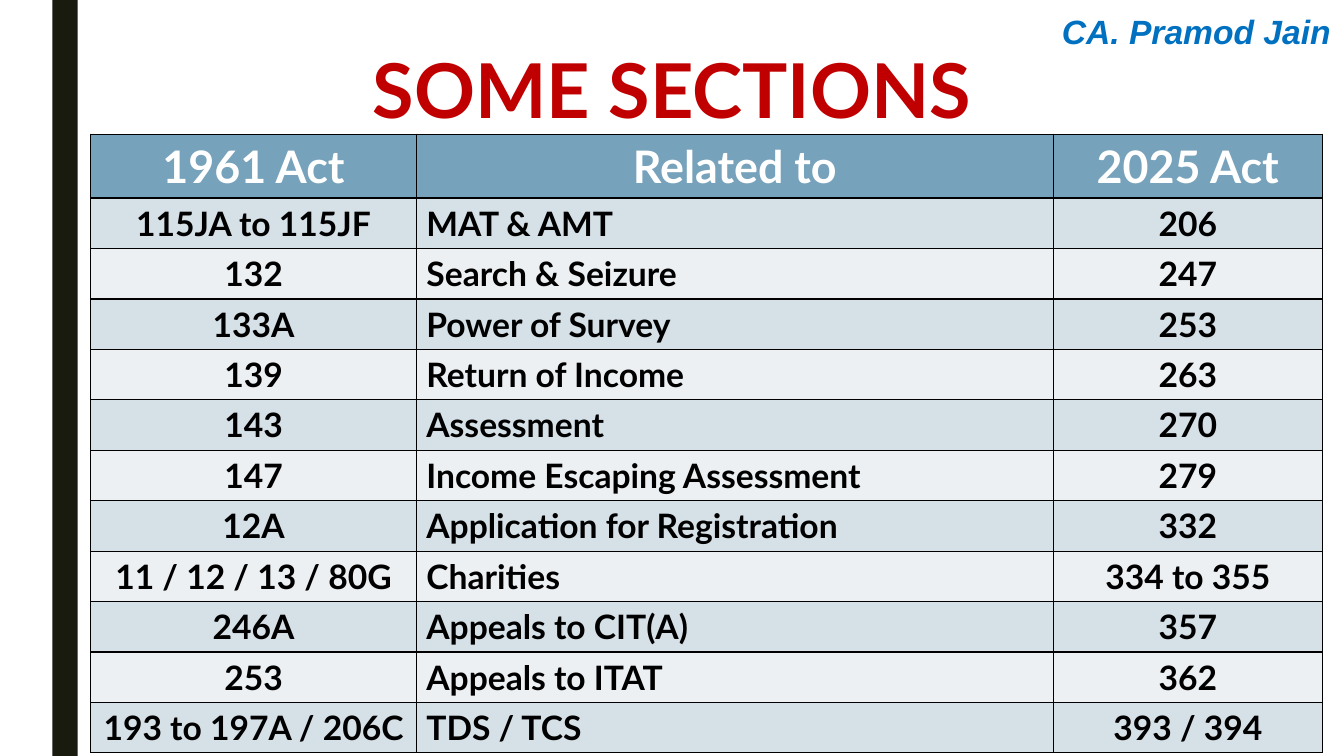
import lxml.etree
import pptx
import pptx.dml.color
import pptx.enum.shapes
import pptx.enum.text
import pptx.oxml.ns
import pptx.util

RGBColor = pptx.dml.color.RGBColor
Align = pptx.enum.text.PP_ALIGN
Anchor = pptx.enum.text.MSO_ANCHOR

BAR = RGBColor(0x19, 0x1B, 0x0E)
BLUE = RGBColor(0x00, 0x70, 0xC0)
RED = RGBColor(0xC0, 0x00, 0x00)
WHITE = RGBColor(0xFF, 0xFF, 0xFF)
BLACK = RGBColor(0x00, 0x00, 0x00)
HEADER = RGBColor(0x77, 0xA2, 0xBB)
BANDS = (RGBColor(0xD6, 0xE0, 0xE7), RGBColor(0xEC, 0xF0, 0xF3))

HEADINGS = ("1961 Act", "Related to", "2025 Act")
SECTIONS = (
    ("115JA to 115JF", "MAT & AMT", "206"),
    ("132", "Search & Seizure", "247"),
    ("133A", "Power of Survey", "253"),
    ("139", "Return of Income", "263"),
    ("143", "Assessment", "270"),
    ("147", "Income Escaping Assessment", "279"),
    ("12A", "Application for Registration", "332"),
    ("11 / 12 / 13 / 80G", "Charities", "334 to 355"),
    ("246A", "Appeals to CIT(A)", "357"),
    ("253", "Appeals to ITAT", "362"),
    ("193 to 197A / 206C", "TDS / TCS", "393 / 394"),
)


class SectionSlide:
    font = "Lato"

    def __init__(self, deck):
        self.deck = deck
        self.slide = deck.slides.add_slide(deck.slide_layouts[6])

    def across(self, percent):
        return round(self.deck.slide_width * percent / 100)

    def down(self, percent):
        return round(self.deck.slide_height * percent / 100)

    def area(self, left, top, width, height):
        return self.across(left), self.down(top), self.across(width), self.down(height)

    def set_words(self, frame, words, size, color, align, font=None, italic=False):
        frame.text = words
        paragraph = frame.paragraphs[0]
        paragraph.alignment = align
        style = paragraph.runs[0].font
        style.name = font or self.font
        style.size = pptx.util.Pt(size)
        style.bold = True
        style.italic = italic
        style.color.rgb = color

    def bar(self, area, color):
        bar = self.slide.shapes.add_shape(
            pptx.enum.shapes.MSO_SHAPE.RECTANGLE, *self.area(*area))
        bar.shadow.inherit = False
        bar.fill.solid()
        bar.fill.fore_color.rgb = color
        bar.line.fill.background()

    def text(self, area, words, size, color, align, anchor=Anchor.TOP, **style):
        frame = self.slide.shapes.add_textbox(*self.area(*area)).text_frame
        frame.word_wrap = True
        frame.vertical_anchor = anchor
        self.set_words(frame, words, size, color, align, **style)

    def border(self, cell):
        properties = cell._tc.get_or_add_tcPr()
        qn = pptx.oxml.ns.qn
        for side in ("a:lnL", "a:lnR", "a:lnT", "a:lnB"):
            line = lxml.etree.SubElement(properties, qn(side), w=str(pptx.util.Pt(1)))
            fill = lxml.etree.SubElement(line, qn("a:solidFill"))
            lxml.etree.SubElement(fill, qn("a:srgbClr"), val=str(BLACK))

    def table(self, left, top, widths, header_height, row_height):
        rows = (HEADINGS, *SECTIONS)
        height = header_height + row_height * len(SECTIONS)
        table = self.slide.shapes.add_table(
            len(rows), len(widths), *self.area(left, top, sum(widths), height)).table
        for column, width in zip(table.columns, widths):
            column.width = self.across(width)
        for number, entries in enumerate(rows):
            heading = number == 0
            table.rows[number].height = self.down(header_height if heading else row_height)
            size, color = (32, WHITE) if heading else (24, BLACK)
            for place, words in enumerate(entries):
                cell = table.cell(number, place)
                self.border(cell)
                cell.fill.solid()
                cell.fill.fore_color.rgb = HEADER if heading else BANDS[(number - 1) % 2]
                align = Align.LEFT if place == 1 and not heading else Align.CENTER
                self.set_words(cell.text_frame, words, size, color, align)


def main():
    deck = pptx.Presentation()
    deck.slide_width = pptx.util.Inches(13.33)
    deck.slide_height = pptx.util.Inches(7.5)
    page = SectionSlide(deck)
    page.bar((3.9, 0, 1.88, 100), BAR)
    page.text((74.1, 0.8, 25.65, 5.6), "CA. Pramod Jain", 24, BLUE, Align.RIGHT,
              font="Arial", italic=True)
    page.text((12.5, 5.6, 75, 12.27), "SOME SECTIONS", 54, RED, Align.CENTER, Anchor.MIDDLE)
    page.table(6.75, 17.75, (24.23, 47.4, 20.02), 8.4, 6.67)
    deck.save("out.pptx")


if __name__ == "__main__":
    main()
